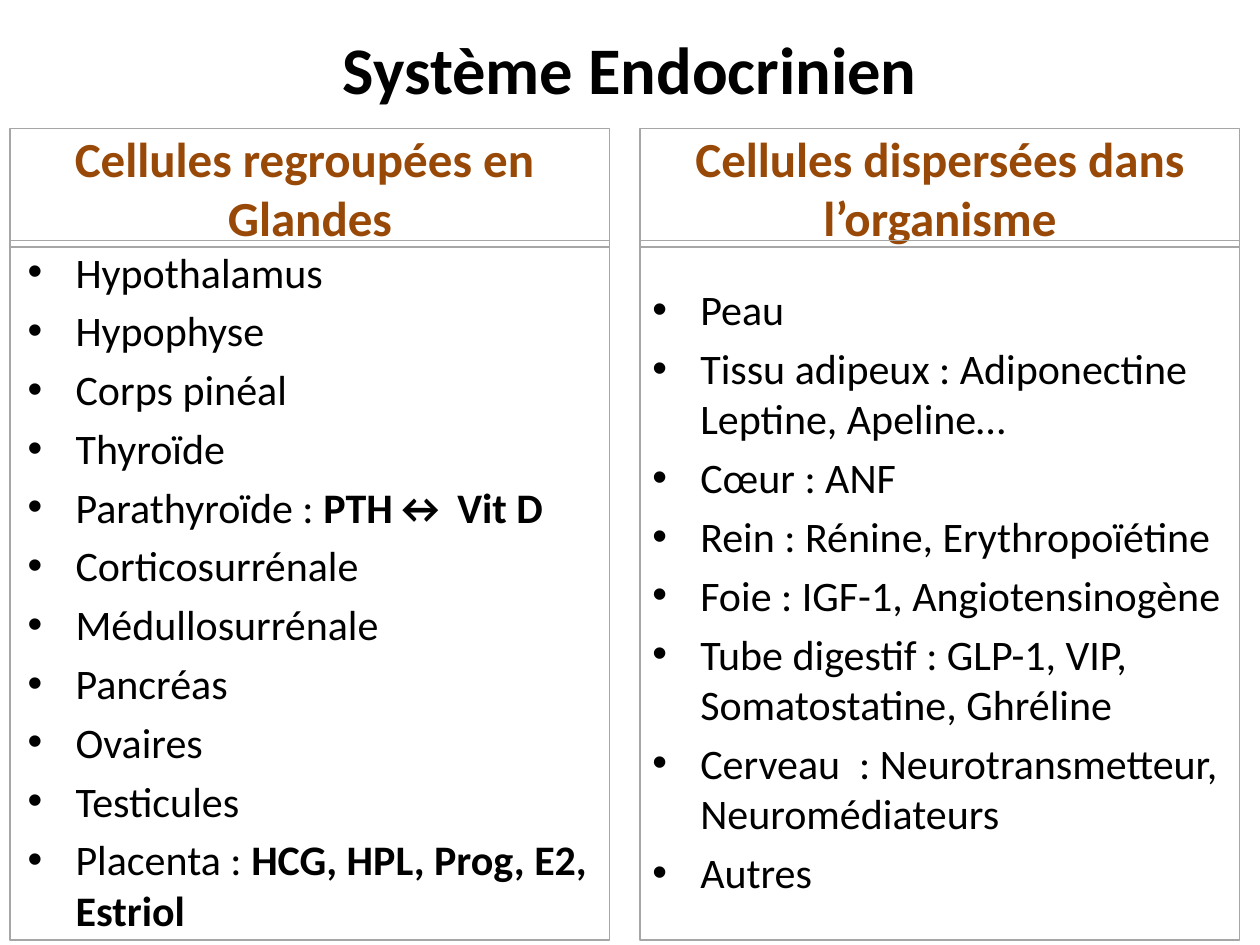
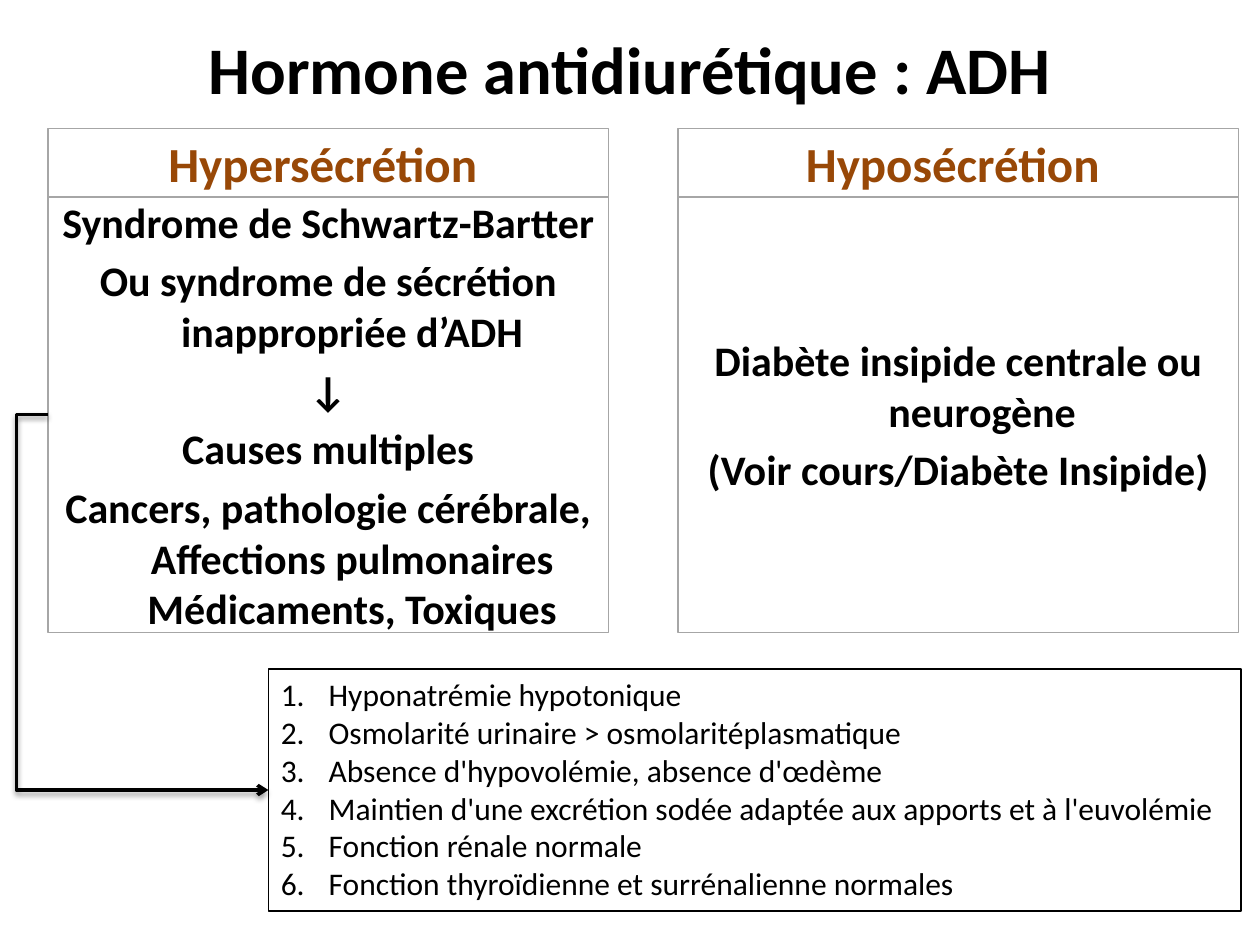
from dataclasses import dataclass

from lxml.etree import SubElement
from pptx import Presentation
from pptx.dml.color import RGBColor
from pptx.enum.shapes import MSO_CONNECTOR as Connector, MSO_SHAPE as Preset
from pptx.enum.text import MSO_ANCHOR as Anchor, PP_ALIGN as Align
from pptx.oxml.ns import qn
from pptx.slide import Slide
from pptx.text.text import TextFrame
from pptx.util import Inches, Pt

# Shared style
FONT = "Calibri"
BLACK, BROWN, GREY = "000000", "984807", "A6A6A6"
TITLE_SIZE, HEADING_SIZE, BODY_SIZE, CRITERIA_SIZE = 38, 28, 24, 18
HANGING = Inches(0.38)

# Grid of 100 columns by 75 rows
COLUMNS, ROWS = 100, 75
WIDTH, HEIGHT = Inches(10), Inches(7.5)
HALF = COLUMNS / 2
HEADING_TOP = 10.2


@dataclass(frozen=True)
class Area:
    left: float
    top: float
    width: float
    height: float

    def emu(self) -> tuple[int, int, int, int]:
        return (across(self.left), down(self.top),
                across(self.width), down(self.height))


@dataclass(frozen=True)
class TextStyle:
    size: int
    color: str = BLACK
    bold: bool = False
    align: Align = Align.LEFT
    gap: float = 0.0  # space before, as a share of the text size
    hanging: bool = False
    bullet: str = ""  # "•" or "1." for automatic numbers


@dataclass(frozen=True)
class Entry:
    """A line of text with an optional bold ending."""
    text: str
    strong: str = ""


@dataclass(frozen=True)
class Panel:
    heading: str
    entries: tuple[Entry, ...]
    inset: float = 0.1


@dataclass(frozen=True)
class PanelGrid:
    left: float
    width: float
    heading_height: float
    body_top: float
    body_height: float


TITLE = TextStyle(TITLE_SIZE, bold=True, align=Align.CENTER)
HEADING = TextStyle(HEADING_SIZE, BROWN, True, Align.CENTER, 0.2)
BULLETS = TextStyle(BODY_SIZE, gap=0.2, hanging=True, bullet="•")
STATEMENTS = TextStyle(BODY_SIZE, bold=True, align=Align.CENTER, gap=0.2, hanging=True)
CRITERIA = TextStyle(CRITERIA_SIZE, hanging=True, bullet="1.")


def across(columns: float) -> int:
    return round(WIDTH * columns / COLUMNS)


def down(rows: float) -> int:
    return round(HEIGHT * rows / ROWS)


def rgb(color: str) -> RGBColor:
    return RGBColor.from_string(color)


def entries(*texts: str) -> tuple[Entry, ...]:
    return tuple(Entry(text) for text in texts)


def write(frame: TextFrame, lines: tuple[Entry, ...], style: TextStyle) -> None:
    frame.word_wrap = True
    for index, line in enumerate(lines):
        paragraph = frame.add_paragraph() if index else frame.paragraphs[0]
        paragraph.alignment = style.align
        properties = paragraph._p.get_or_add_pPr()
        if style.hanging:
            properties.set("marL", str(HANGING))
            properties.set("indent", str(-HANGING))
        if style.bullet == "1.":
            SubElement(properties, qn("a:buAutoNum"), type="arabicPeriod")
        elif style.bullet:
            SubElement(properties, qn("a:buFont"), typeface="Arial")
            SubElement(properties, qn("a:buChar"), char=style.bullet)
        paragraph.space_before = Pt(style.size * style.gap)
        font = paragraph.font
        font.name, font.size, font.bold = FONT, Pt(style.size), style.bold
        font.color.rgb = rgb(style.color)
        paragraph.add_run().text = line.text
        if line.strong:
            ending = paragraph.add_run()
            ending.text = line.strong
            ending.font.bold = True


def add_box(slide: Slide, area: Area, lines: tuple[Entry, ...], style: TextStyle,
            outline: str = GREY, anchor: Anchor = Anchor.MIDDLE,
            inset: float = 0.1) -> None:
    box = slide.shapes.add_shape(Preset.RECTANGLE, *area.emu())
    box.shadow.inherit = False
    box.fill.background()
    box.line.color.rgb = rgb(outline)
    box.line.width = Pt(0.75)
    box.text_frame.vertical_anchor = anchor
    box.text_frame.margin_left = Inches(inset)
    write(box.text_frame, lines, style)


def add_title(slide: Slide, text: str) -> None:
    title = slide.shapes.add_textbox(*Area(5, 1.6, 90, 7.5).emu())
    title.text_frame.vertical_anchor = Anchor.MIDDLE
    write(title.text_frame, entries(text), TITLE)


def add_panels(slide: Slide, grid: PanelGrid, panels: tuple[Panel, ...],
               style: TextStyle) -> None:
    for index, panel in enumerate(panels):
        left = grid.left + index * HALF
        add_box(slide, Area(left, HEADING_TOP, grid.width, grid.heading_height),
                entries(panel.heading), HEADING)
        add_box(slide, Area(left, grid.body_top, grid.width, grid.body_height),
                panel.entries, style, inset=panel.inset)


def add_elbow_arrow(slide: Slide, start: tuple[float, float],
                    end: tuple[float, float], bend: float) -> None:
    arrow = slide.shapes.add_connector(
        Connector.ELBOW, across(start[0]), down(start[1]), across(end[0]), down(end[1]))
    arrow.line.color.rgb = rgb(BLACK)
    arrow.line.width = Pt(2)
    # Place of the bend, as a share of the arrow's width
    share = (bend - start[0]) / (end[0] - start[0])
    properties = arrow._element.spPr
    guides = properties.find(qn("a:prstGeom")).get_or_add_avLst()
    SubElement(guides, qn("a:gd"), name="adj1", fmla=f"val {round(share * 100000)}")
    SubElement(properties.find(qn("a:ln")), qn("a:tailEnd"), type="arrow")
    # Soft shadow below the line
    effects = SubElement(properties, qn("a:effectLst"))
    shadow = SubElement(effects, qn("a:outerShdw"), blurRad=str(Pt(3.1)),
                        dist=str(Pt(1.6)), dir="5400000", rotWithShape="0")
    tint = SubElement(shadow, qn("a:srgbClr"), val=BLACK)
    SubElement(tint, qn("a:alpha"), val="38000")


# Content
GLANDS = Panel(
    "Cellules regroupées en  Glandes",
    entries("Hypothalamus", "Hypophyse", "Corps pinéal", "Thyroïde")
    + (Entry("Parathyroïde : ", "PTH↔ Vit D"),)
    + entries("Corticosurrénale", "Médullosurrénale", "Pancréas", "Ovaires", "Testicules")
    + (Entry("Placenta : ", "HCG, HPL, Prog, E2, Estriol"),),
    inset=0.14,
)
SCATTERED_CELLS = Panel(
    "Cellules dispersées dans l’organisme",
    entries(
        "Peau",
        "Tissu adipeux : Adiponectine Leptine, Apeline…",
        "Cœur : ANF",
        "Rein : Rénine, Erythropoïétine",
        "Foie : IGF-1, Angiotensinogène",
        "Tube digestif : GLP-1, VIP, Somatostatine, Ghréline",
        "Cerveau  : Neurotransmetteur, Neuromédiateurs",
        "Autres",
    ),
)
HYPERSECRETION = Panel(
    "Hypersécrétion ",
    entries(
        "Syndrome de Schwartz-Bartter",
        "Ou syndrome de sécrétion inappropriée d’ADH",
        "↓",
        "Causes multiples",
        "Cancers, pathologie cérébrale, Affections pulmonaires Médicaments, Toxiques",
    ),
)
HYPOSECRETION = Panel(
    "Hyposécrétion ",
    entries("Diabète insipide centrale ou neurogène", "(Voir cours/Diabète Insipide)"),
)
SIADH_CRITERIA = entries(
    "Hyponatrémie hypotonique",
    "Osmolarité urinaire > osmolaritéplasmatique",
    "Absence d'hypovolémie, absence d'œdème",
    "Maintien d'une excrétion sodée adaptée aux apports et à l'euvolémie",
    "Fonction rénale normale",
    "Fonction thyroïdienne et surrénalienne normales",
)


def build_endocrine_system(slide: Slide) -> None:
    add_title(slide, "Système Endocrinien")
    add_panels(slide, PanelGrid(0.8, 47.6, 9.4, 19.1, 55.5),
               (GLANDS, SCATTERED_CELLS), BULLETS)


def build_antidiuretic_hormone(slide: Slide) -> None:
    add_title(slide, "Hormone antidiurétique : ADH")
    grid = PanelGrid(3.8, 44.5, 5.5, 15.6, 34.6)
    add_panels(slide, grid, (HYPERSECRETION, HYPOSECRETION), STATEMENTS)
    criteria = Area(21.3, 53.1, 77.2, 19.2)
    add_box(slide, criteria, SIADH_CRITERIA, CRITERIA, BLACK, Anchor.TOP)
    # From the middle of the hypersecretion panel to the criteria
    add_elbow_arrow(slide, (grid.left, grid.body_top + grid.body_height / 2),
                    (criteria.left, criteria.top + criteria.height / 2), bend=1.3)


def main() -> None:
    deck = Presentation()
    deck.slide_width, deck.slide_height = WIDTH, HEIGHT
    blank = deck.slide_layouts[6]
    for build in (build_endocrine_system, build_antidiuretic_hormone):
        build(deck.slides.add_slide(blank))
    deck.save("out.pptx")


if __name__ == "__main__":
    main()
